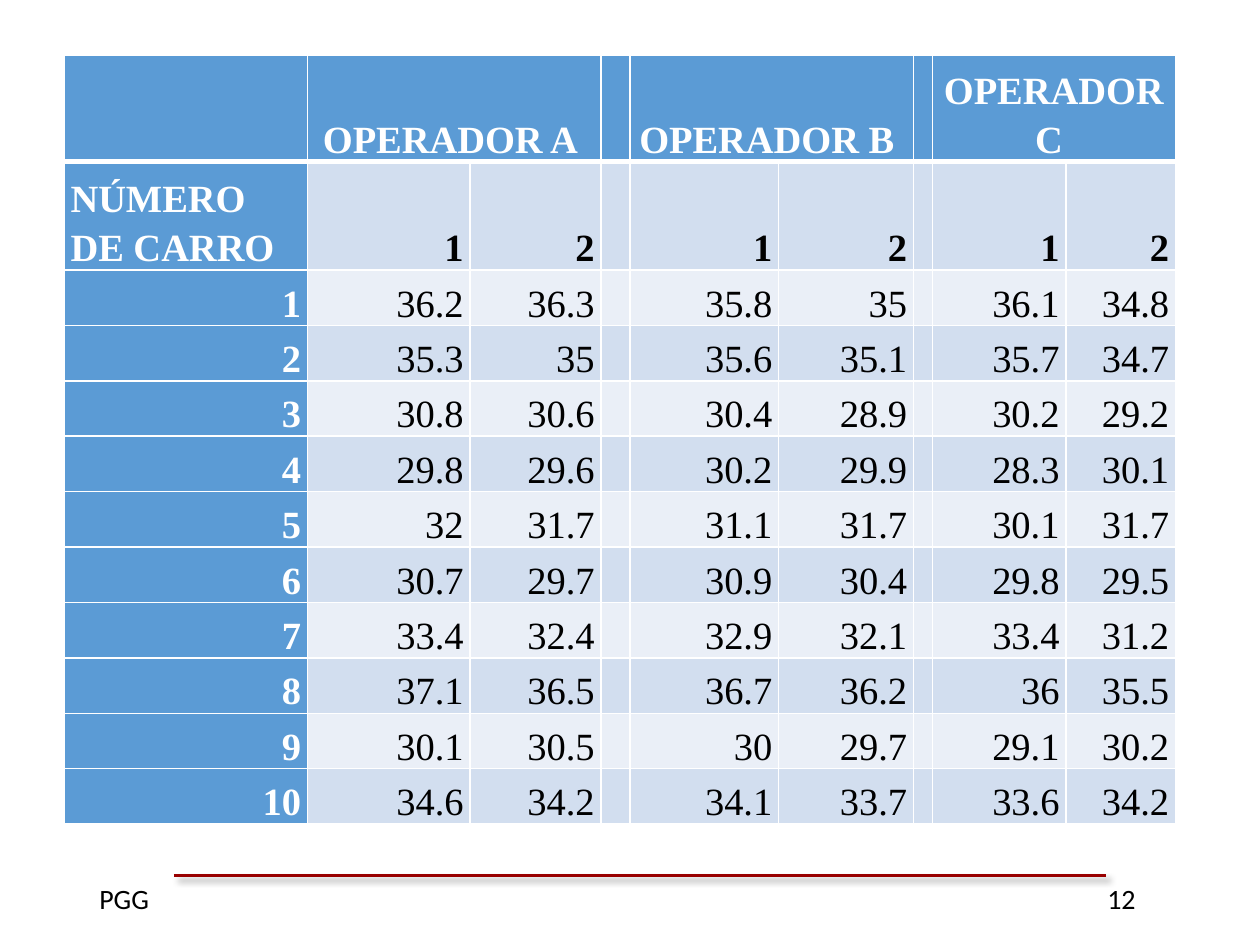
from lxml.etree import SubElement
from pptx import Presentation
from pptx.dml.color import RGBColor
from pptx.enum.shapes import MSO_CONNECTOR
from pptx.enum.text import MSO_ANCHOR, PP_ALIGN
from pptx.oxml import parse_xml
from pptx.oxml.ns import nsdecls, qn
from pptx.util import Inches, Pt

COLORS = {"head": "5B9BD5", "dark_band": "D2DEEF", "light_band": "EAEFF7",
          "white": "FFFFFF", "black": "000000", "rule": "990000"}
COL_WIDTHS = [1.93, 1.29, 1.04, 0.23, 1.18, 1.07, 0.15, 1.06, 0.87]
ROW_HEIGHTS = [0.84, 0.86] + [0.44] * 10
OPERATOR_COLS = {1: "OPERADOR A ", 4: "OPERADOR B ", 7: "OPERADOR C "}
MEASURES = [
    ["36.2", "36.3", "35.8", "35", "36.1", "34.8"],
    ["35.3", "35", "35.6", "35.1", "35.7", "34.7"],
    ["30.8", "30.6", "30.4", "28.9", "30.2", "29.2"],
    ["29.8", "29.6", "30.2", "29.9", "28.3", "30.1"],
    ["32", "31.7", "31.1", "31.7", "30.1", "31.7"],
    ["30.7", "29.7", "30.9", "30.4", "29.8", "29.5"],
    ["33.4", "32.4", "32.9", "32.1", "33.4", "31.2"],
    ["37.1", "36.5", "36.7", "36.2", "36", "35.5"],
    ["30.1", "30.5", "30", "29.7", "29.1", "30.2"],
    ["34.6", "34.2", "34.1", "33.7", "33.6", "34.2"],
]


def rgb(name):
    """Return a named colour."""
    return RGBColor.from_string(COLORS[name])


def add_run(p, text, size, font, color, bold=False):
    """Add one formatted run to a paragraph."""
    r = p.add_run()
    r.text = text
    r.font.size, r.font.name, r.font.bold = Pt(size), font, bold
    r.font.color.rgb = rgb(color)


def set_borders(cell, top, bottom):
    """Draw white cell borders, with widths in points for top and bottom."""
    tcPr = cell._tc.get_or_add_tcPr()
    sides = [("lnL", 1), ("lnR", 1), ("lnT", top), ("lnB", bottom)]
    for i, (side, width) in enumerate(sides):
        tcPr.insert(i, parse_xml(
            f'<a:{side} {nsdecls("a")} w="{Pt(width)}"><a:solidFill>'
            f'<a:srgbClr val="{COLORS["white"]}"/></a:solidFill></a:{side}>'))


def spread(values):
    """Place six values in three pairs, with a blank between pairs."""
    return values[:2] + [""] + values[2:4] + [""] + values[4:]


def table_rows():
    """Return the text of every row."""
    head = [OPERATOR_COLS.get(col, "") for col in range(len(COL_WIDTHS))]
    trials = ["NÚMERO DE CARRO"] + spread(["1", "2"] * 3)
    return [head, trials] + [[str(car)] + spread(values)
                             for car, values in enumerate(MEASURES, 1)]


def format_cell(cell, row, col, text):
    """Fill one cell according to its place in the table."""
    is_head = row == 0 or col == 0
    band = "dark_band" if row % 2 else "light_band"
    cell.fill.solid()
    cell.fill.fore_color.rgb = rgb("head" if is_head else band)
    set_borders(cell, 3 if row == 1 else 1, 3 if row == 0 else 1)
    cell.vertical_anchor = MSO_ANCHOR.BOTTOM
    cell.margin_left = cell.margin_right = Inches(0.05)
    cell.margin_top = cell.margin_bottom = 0
    if not text:
        return
    p = cell.text_frame.paragraphs[0]
    p.line_spacing = 1.15
    if row == 0:
        p.alignment = PP_ALIGN.CENTER
    elif (row, col) == (1, 0):
        p.alignment = PP_ALIGN.LEFT
    else:
        p.alignment = PP_ALIGN.RIGHT
    add_run(p, text, 22, "Times New Roman", "white" if is_head else "black",
            is_head or row == 1)


def add_measures_table(s):
    """Add the table of measurements by car and operator."""
    table = s.shapes.add_table(
        len(ROW_HEIGHTS), len(COL_WIDTHS), Inches(0.51), Inches(0.44),
        Inches(sum(COL_WIDTHS)), Inches(sum(ROW_HEIGHTS))).table
    table.first_row = table.horz_banding = False
    for column, width in zip(table.columns, COL_WIDTHS):
        column.width = Inches(width)
    for row, height in zip(table.rows, ROW_HEIGHTS):
        row.height = Inches(height)
    for row, texts in enumerate(table_rows()):
        for col, text in enumerate(texts):
            format_cell(table.cell(row, col), row, col, text)
    for col in OPERATOR_COLS:
        table.cell(0, col).merge(table.cell(0, col + 1))


def add_footer_rule(s):
    """Add the red footer line with its soft shadow."""
    y = Inches(6.95)
    line = s.shapes.add_connector(MSO_CONNECTOR.STRAIGHT,
                                  Inches(1.38), y, Inches(8.78), y)
    line.line.color.rgb = rgb("rule")
    line.line.width = Pt(1.5)
    line._element.spPr.append(parse_xml(
        f'<a:effectLst {nsdecls("a")}><a:outerShdw blurRad="{Pt(4)}" '
        f'dist="{Pt(3)}" dir="2700000" algn="tl" rotWithShape="0">'
        f'<a:srgbClr val="{COLORS["black"]}"><a:alpha val="40000"/>'
        '</a:srgbClr></a:outerShdw></a:effectLst>'))


def add_footer_text(s, author, number):
    """Add the author and the page number, set apart by a tab stop."""
    box = s.shapes.add_textbox(Inches(0.69), Inches(6.95),
                               Inches(8.62), Inches(0.37))
    tf = box.text_frame
    tf.word_wrap = True
    p = tf.paragraphs[0]
    tabs = SubElement(p._p.get_or_add_pPr(), qn("a:tabLst"))
    SubElement(tabs, qn("a:tab"), pos=str(Inches(8)), algn="l")
    add_run(p, f"{author}\t{number}", 16, "Calibri", "black")


def main():
    """Build the slide and save it."""
    prs = Presentation()
    prs.slide_width, prs.slide_height = Inches(10), Inches(7.5)
    s = prs.slides.add_slide(prs.slide_layouts[6])
    add_footer_text(s, "PGG", "12")
    add_footer_rule(s)
    add_measures_table(s)
    prs.save("out.pptx")


main()
